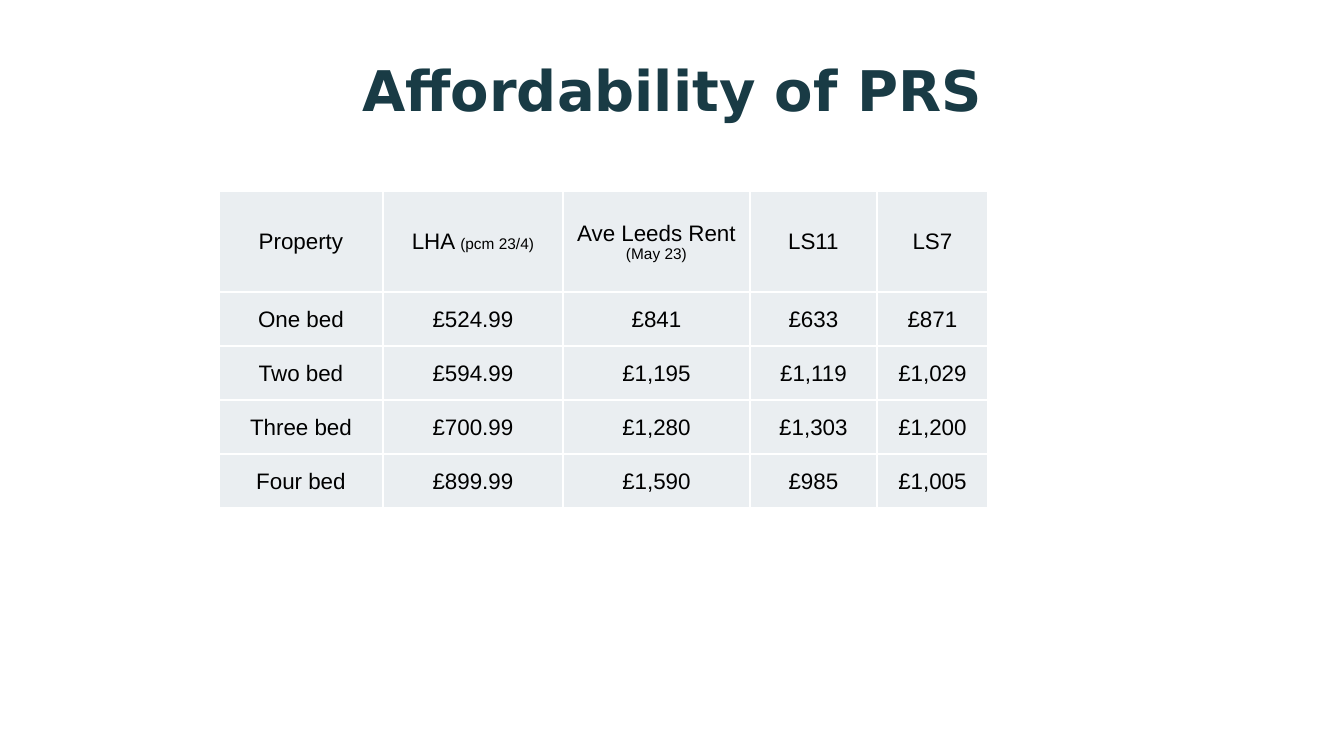
import dataclasses

import lxml.etree
import pptx
import pptx.dml.color
import pptx.enum.text
import pptx.oxml.ns
import pptx.util

EMU_PER_PX = 914400 / 100.8


@dataclasses.dataclass(frozen=True)
class Theme:
    """Colours, fonts and type sizes of the slide."""
    title_colour: str = "193B45"
    text_colour: str = "000000"
    cell_fill: str = "EAEEF1"
    border_colour: str = "FFFFFF"
    border_width: int = 1
    title_font: str = "DejaVu Sans"
    table_font: str = "Arial"
    title_size: int = 40
    cell_size: int = 16
    note_size: int = 11


@dataclasses.dataclass(frozen=True)
class Box:
    """A rectangle in px."""
    left: int
    top: int
    width: int
    height: int


THEME = Theme()
RENT_ROWS = [
    [("Property",), ("LHA ", "(pcm 23/4)"), ("Ave Leeds Rent ", "(May 23)"), ("LS11",), ("LS7",)],
    [("One bed",), ("£524.99",), ("£841",), ("£633",), ("£871",)],
    [("Two bed",), ("£594.99",), ("£1,195",), ("£1,119",), ("£1,029",)],
    [("Three bed",), ("£700.99",), ("£1,280",), ("£1,303",), ("£1,200",)],
    [("Four bed",), ("£899.99",), ("£1,590",), ("£985",), ("£1,005",)],
]
COLUMN_WIDTHS = [164, 180, 187, 127, 111]
HEADER_HEIGHT = 101


def px(length):
    """Turn px into EMU."""
    return pptx.util.Emu(round(length * EMU_PER_PX))


def rgb(colour):
    """Turn a hex string into a colour."""
    return pptx.dml.color.RGBColor.from_string(colour)


def format_paragraph(para, font_name, size, colour, bold=False):
    """Centre a paragraph and set its font."""
    para.alignment = pptx.enum.text.PP_ALIGN.CENTER
    para.font.name = font_name
    para.font.size = pptx.util.Pt(size)
    para.font.color.rgb = rgb(colour)
    para.font.bold = bold


def add_borders(cell):
    """Draw a thin line on all four sides of a cell."""
    properties = cell._tc.get_or_add_tcPr()
    qn = pptx.oxml.ns.qn
    for position, side in enumerate(("a:lnL", "a:lnR", "a:lnT", "a:lnB")):
        line = lxml.etree.Element(qn(side), w=str(pptx.util.Pt(THEME.border_width)))
        fill = lxml.etree.SubElement(line, qn("a:solidFill"))
        lxml.etree.SubElement(fill, qn("a:srgbClr"), val=THEME.border_colour)
        properties.insert(position, line)


def fill_cell(cell, texts):
    """Write the main text and an optional smaller note into a cell."""
    cell.fill.solid()
    cell.fill.fore_color.rgb = rgb(THEME.cell_fill)
    add_borders(cell)
    cell.margin_left = cell.margin_right = cell.margin_top = px(1)
    cell.margin_bottom = 0
    cell.vertical_anchor = pptx.enum.text.MSO_ANCHOR.MIDDLE
    para = cell.text_frame.paragraphs[0]
    format_paragraph(para, THEME.table_font, THEME.cell_size, THEME.text_colour)
    for text, size in zip(texts, (THEME.cell_size, THEME.note_size)):
        span = para.add_run()
        span.text = text
        if size != THEME.cell_size:
            span.font.size = pptx.util.Pt(size)


def place_title(page, box, text):
    """Move the title placeholder into the box and format it."""
    title = page.shapes.title
    title.left, title.top = px(box.left), px(box.top)
    title.width, title.height = px(box.width), px(box.height)
    frame = title.text_frame
    frame.text = text
    frame.vertical_anchor = pptx.enum.text.MSO_ANCHOR.MIDDLE
    format_paragraph(frame.paragraphs[0], THEME.title_font, THEME.title_size,
                     THEME.title_colour, bold=True)


def place_rent_table(page, box):
    """Draw the rent table in the box, with equal rows under the header."""
    table = page.shapes.add_table(
        len(RENT_ROWS), len(COLUMN_WIDTHS),
        px(box.left), px(box.top), px(box.width), px(box.height)).table
    table.first_row = table.horz_banding = False
    for column, width in zip(table.columns, COLUMN_WIDTHS):
        column.width = px(width)
    body_height = (box.height - HEADER_HEIGHT) / (len(RENT_ROWS) - 1)
    for index, row in enumerate(table.rows):
        row.height = px(body_height if index else HEADER_HEIGHT)
        for cell, texts in zip(row.cells, RENT_ROWS[index]):
            fill_cell(cell, texts)


def main():
    """Build and save the deck."""
    deck = pptx.Presentation()
    deck.slide_width, deck.slide_height = px(1344), px(756)
    page = deck.slides.add_slide(deck.slide_layouts.get_by_name("Title Only"))
    place_title(page, Box(67, 26, 1210, 126), "Affordability of PRS")
    place_rent_table(page, Box(219, 191, sum(COLUMN_WIDTHS), 317))
    deck.save("out.pptx")


if __name__ == "__main__":
    main()
